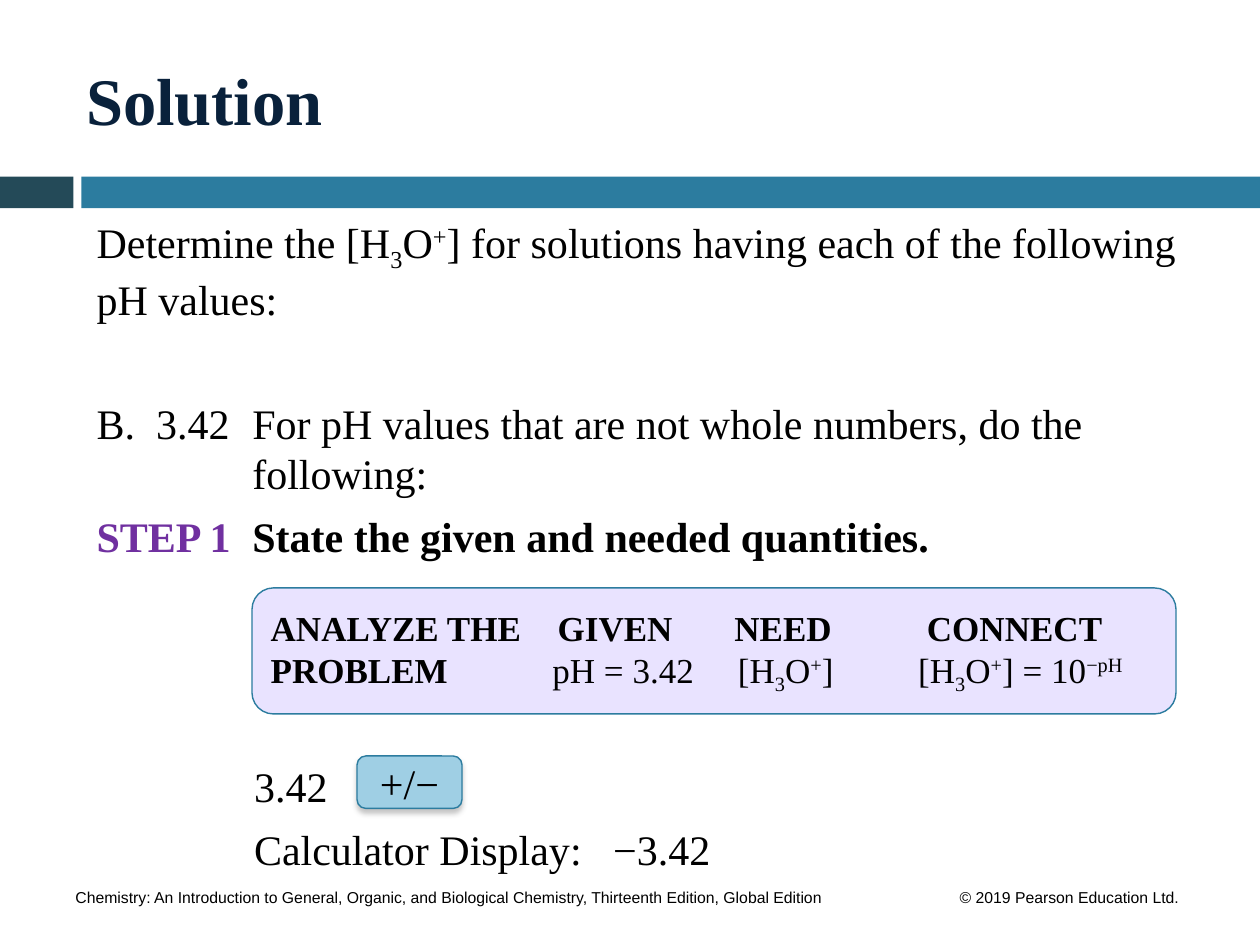
from lxml.etree import SubElement
from pptx import Presentation
from pptx.dml.color import RGBColor
from pptx.enum.shapes import MSO_SHAPE
from pptx.enum.text import MSO_ANCHOR, MSO_AUTO_SIZE, PP_ALIGN
from pptx.oxml.ns import qn
from pptx.util import Pt

RECT, ROUND = MSO_SHAPE.RECTANGLE, MSO_SHAPE.ROUNDED_RECTANGLE
TOP, MID = MSO_ANCHOR.TOP, MSO_ANCHOR.MIDDLE
LEFT, CENTER = PP_ALIGN.LEFT, PP_ALIGN.CENTER
FIXED = MSO_AUTO_SIZE.NONE
SERIF, SANS = "Times New Roman", "Arial"
COLORS = {
    "dark": "244A58", "teal": "2C7C9F", "navy": "09213B", "black": "000000",
    "step": "7030A0", "panel": "A992FF", "key": "9FCFE4", "shade": "808080",
}
BASE = {"sub": "-25000", "sup": "30000"}
HYDRO = [("[H", ""), ("3", "sub"), ("O", ""), ("+", "sup")]


def color(name):
    return RGBColor.from_string(COLORS[name])


def write(para, runs, size, face=SERIF, tone="black", bold=False, align=LEFT):
    para.alignment = align
    font = para.font
    font.name, font.size, font.bold = face, Pt(size), bold
    font.color.rgb = color(tone)
    for text, style in runs:
        run = para.add_run()
        run.text = text
        if style in BASE:
            run._r.get_or_add_rPr().set("baseline", BASE[style])
        elif style == "bold":
            run.font.bold = True
        elif style:
            run.font.color.rgb = color(style)


prs = Presentation()
prs.slide_width, prs.slide_height = Pt(720), Pt(540)
slide = prs.slides.add_slide(prs.slide_layouts[1])
shapes = slide.shapes

for left, width, tone in [(0, 42, "dark"), (46.5, 673.5, "teal")]:
    bar = shapes.add_shape(RECT, Pt(left), Pt(101), Pt(width), Pt(18))
    bar.shadow.inherit = False
    bar.fill.solid()
    bar.fill.fore_color.rgb = color(tone)
    bar.line.fill.background()

notes = [
    (36, 450, LEFT, "Chemistry: An Introduction to General, Organic, and "
     "Biological Chemistry, Thirteenth Edition, Global Edition"),
    (521, 180, CENTER, "© 2019 Pearson Education Ltd."),
]
for left, width, align, text in notes:
    foot = shapes.add_textbox(Pt(left), Pt(504), Pt(width), Pt(18)).text_frame
    foot.word_wrap = True
    write(foot.paragraphs[0], [(text, "")], 9, SANS, align=align)

title, body = shapes.title, slide.placeholders[1]
for holder, top, left, width, height, anchor in [
    (title, 20.5, 42, 642, 72, MID),
    (body, 120, 48, 636, 382, TOP),
]:
    holder.left, holder.top = Pt(left), Pt(top)
    holder.width, holder.height = Pt(width), Pt(height)
    frame = holder.text_frame
    frame.auto_size, frame.vertical_anchor = FIXED, anchor
    frame.word_wrap = True
write(title.text_frame.paragraphs[0], [("Solution", "")], 38, tone="navy", bold=True)

lines = [
    (0, 0, 0, False, [("Determine the ", "")] + HYDRO + [
        ("] for solutions having each of the following pH values:", "")]),
    (42, 89, -89, False, [
        ("B.  3.42\tFor pH values that are not whole numbers, do the following:", "")]),
    (7, 89, -89, True, [
        ("STEP 1\t", "step"), ("State the given and needed quantities.", "")]),
    (114, 90, 0, False, [("3.42", "")]),
    (7, 90, 0, False, [("Calculator Display:   −3.42", "")]),
]
frame = body.text_frame
for num, (gap, margin, hang, bold, runs) in enumerate(lines):
    para = frame.add_paragraph() if num else frame.paragraphs[0]
    para.line_spacing, para.space_before = 1.0, Pt(gap)
    props = para._p.get_or_add_pPr()
    props.set("marL", str(int(Pt(margin))))
    props.set("indent", str(int(Pt(hang))))
    SubElement(props, qn("a:buNone"))
    write(para, runs, 24, bold=bold)

boxes = []
for left, top, width, height, tone in [
    (144, 336, 528, 72, "panel"), (204, 432, 60, 30, "key"),
]:
    box = shapes.add_shape(ROUND, Pt(left), Pt(top), Pt(width), Pt(height))
    box.adjustments[0] = 0.17
    box.shadow.inherit = False
    box.fill.solid()
    box.fill.fore_color.rgb = color(tone)
    box.line.color.rgb = color("teal")
    box.line.width = Pt(0.79)
    box.text_frame.vertical_anchor = MID
    boxes.append(box)
panel, key = boxes

tint = panel._element.spPr.find(qn("a:solidFill")).find(qn("a:srgbClr"))
SubElement(tint, qn("a:alpha"), val="25000")
rows = [
    ((164, 265, 375), [("ANALYZE THE\tGIVEN\tNEED\tCONNECT", "bold")]),
    ((161, 267, 370), [("PROBLEM", "bold"), ("\tpH = 3.42\t", "")] + HYDRO
     + [("]\t", "")] + HYDRO + [("] = 10", ""), ("−pH", "sup")]),
]
frame = panel.text_frame
for num, (stops, runs) in enumerate(rows):
    para = frame.add_paragraph() if num else frame.paragraphs[0]
    tabs = SubElement(para._p.get_or_add_pPr(), qn("a:tabLst"))
    for stop in stops:
        SubElement(tabs, qn("a:tab"), pos=str(int(Pt(stop))), algn="l")
    write(para, runs, 20)

effect = key._element.spPr.find(qn("a:effectLst"))
shade = SubElement(effect, qn("a:outerShdw"), blurRad=str(int(Pt(3))),
                   dist=str(int(Pt(2.4))), dir="5400000", rotWithShape="0")
tint = SubElement(shade, qn("a:srgbClr"), val=COLORS["shade"])
SubElement(tint, qn("a:alpha"), val="45000")
write(key.text_frame.paragraphs[0], [("+/−", "")], 24, align=CENTER)

prs.save("out.pptx")
